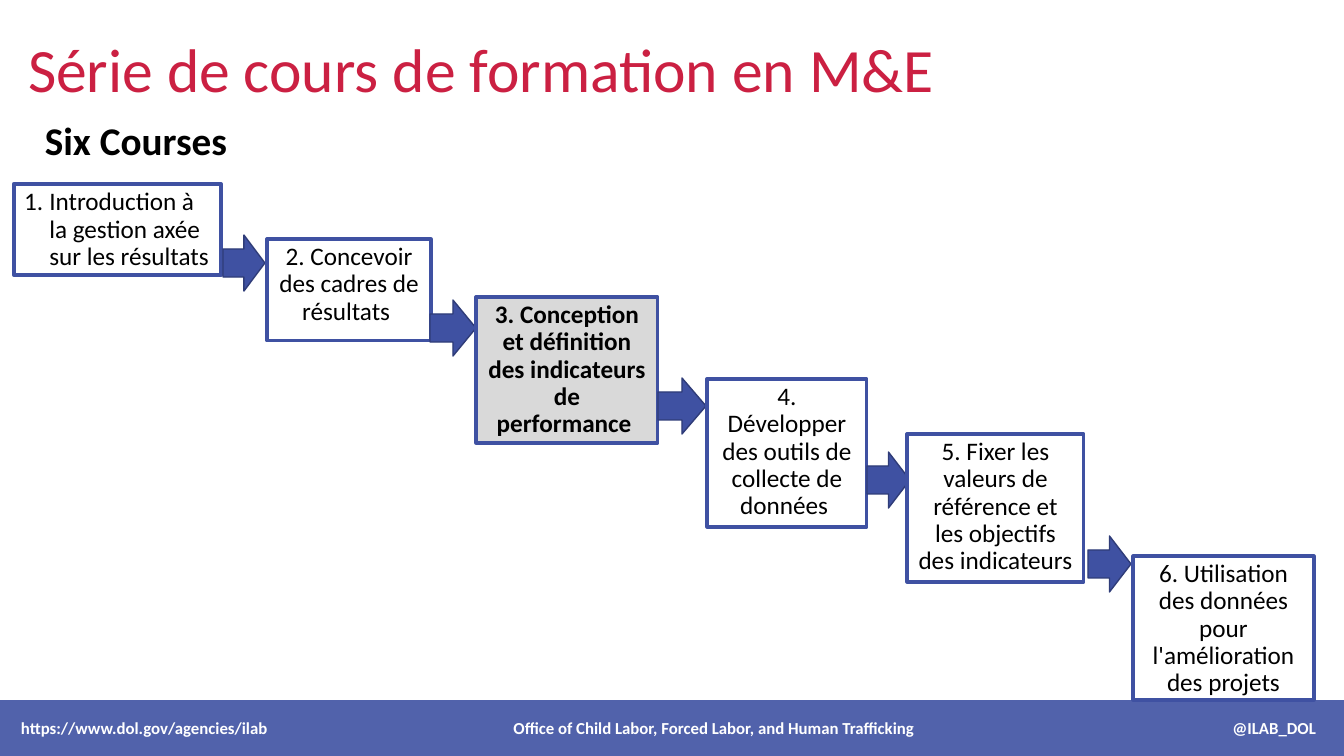
import pptx
import pptx.util
import pptx.dml.color
import pptx.enum.shapes
import pptx.enum.text
import pptx.oxml
import pptx.oxml.ns

RGB = pptx.dml.color.RGBColor
SHAPE = pptx.enum.shapes.MSO_SHAPE
ALIGN = pptx.enum.text.PP_ALIGN
ANCHOR = pptx.enum.text.MSO_ANCHOR
AUTO = pptx.enum.text.MSO_AUTO_SIZE
Pt = pptx.util.Pt

CRIMSON = RGB(0xCB, 0x20, 0x42)
BLUE = RGB(0x3F, 0x51, 0xA2)
NAVY = RGB(0x2F, 0x3C, 0x78)
GREY = RGB(0xD9, 0xD9, 0xD9)
WHITE = RGB(0xFF, 0xFF, 0xFF)
BLACK = RGB(0, 0, 0)

EMU_PER_PX = 914400 / 100.8
ARROW_HEIGHT = 56

COURSES = [
    ((267, 239, 164, 102), "2. Concevoir des cadres de résultats "),
    ((476, 297, 182, 146), "3. Conception et définition des indicateurs de performance "),
    ((707, 379, 160, 148), "4. Développer des outils de collecte de données "),
    ((907, 434, 177, 148), "5. Fixer les valeurs de référence et les objectifs des indicateurs "),
    ((1133, 556, 181, 144), "6. Utilisation des données pour l'amélioration des projets"),
]
CURRENT_COURSE = 3
ARROWS = [(223, 235, 42), (430, 300, 46), (658, 378, 48), (867, 452, 43), (1088, 536, 43)]
FOOTER = [
    (11, 400, ALIGN.LEFT, "https://www.dol.gov/agencies/ilab"),
    (464, 500, ALIGN.CENTER, "Office of Child Labor, Forced Labor, and Human Trafficking"),
    (1026, 300, ALIGN.RIGHT, "@ILAB_DOL"),
]


def px(n):
    return round(n * EMU_PER_PX)


class Deck:
    font = "Calibri"

    def __init__(self, width, height):
        self.prs = pptx.Presentation()
        self.prs.slide_width, self.prs.slide_height = px(width), px(height)
        self.slide = self.prs.slides.add_slide(self.prs.slide_layouts[1])

    def place(self, sp, box):
        sp.left, sp.top, sp.width, sp.height = map(px, box)

    def set_text(self, sp, text, size, color, bold=False, align=ALIGN.LEFT,
                 anchor=ANCHOR.TOP, spacing=0.9, wrap=True):
        tf = sp.text_frame
        tf.text = text
        tf.word_wrap = wrap
        tf.auto_size = AUTO.NONE
        tf.vertical_anchor = anchor
        p = tf.paragraphs[0]
        p.alignment = align
        p.line_spacing = spacing
        p.space_before = Pt(0)
        f = p.runs[0].font
        f.name, f.size, f.bold = self.font, Pt(size), bold
        f.color.rgb = color

    def paint(self, sp, fill, line=None, weight=1):
        sp.fill.solid()
        sp.fill.fore_color.rgb = fill
        if line is None:
            sp.line.fill.background()
        else:
            sp.line.color.rgb = line
            sp.line.width = Pt(weight)

    def shape(self, kind, box, fill, line=None, weight=1):
        sp = self.slide.shapes.add_shape(kind, *map(px, box))
        sp.shadow.inherit = False
        self.paint(sp, fill, line, weight)
        return sp

    def title(self, box, text):
        sp = self.slide.shapes.title
        self.place(sp, box)
        self.set_text(sp, text, 44, CRIMSON, anchor=ANCHOR.MIDDLE)

    def label(self, box, text, size, color, **style):
        sp = self.slide.shapes.add_textbox(*map(px, box))
        self.set_text(sp, text, size, color, bold=True, spacing=1.0, **style)

    def numbered_body(self, box, text):
        sp = self.slide.placeholders[1]
        self.place(sp, box)
        self.paint(sp, WHITE, BLUE, 3)
        self.set_text(sp, text, 18, BLACK)
        pPr = sp.text_frame.paragraphs[0]._p.get_or_add_pPr()
        pPr.set("marL", "228600")
        pPr.set("indent", "-228600")
        bullet = pptx.oxml.parse_xml(
            '<a:buAutoNum %s type="arabicPeriod"/>' % pptx.oxml.ns.nsdecls("a"))
        pPr.append(bullet)

    def course(self, box, text, current):
        sp = self.shape(SHAPE.RECTANGLE, box, GREY if current else WHITE, BLUE, 2.25)
        self.set_text(sp, text, 18, BLACK, bold=current, align=ALIGN.CENTER)

    def arrow(self, left, top, width):
        self.shape(SHAPE.RIGHT_ARROW, (left, top, width, ARROW_HEIGHT), BLUE, NAVY)

    def footer(self, top, height, width, parts):
        sp = self.shape(SHAPE.RECTANGLE, (0, top, width, height), BLUE)
        color = sp._element.spPr.find(".//" + pptx.oxml.ns.qn("a:srgbClr"))
        color.append(pptx.oxml.parse_xml(
            '<a:alpha %s val="90000"/>' % pptx.oxml.ns.nsdecls("a")))
        for left, w, align, text in parts:
            self.label((left, top, w, height), text, 12, WHITE,
                       align=align, anchor=ANCHOR.MIDDLE)


def main():
    deck = Deck(1344, 756)
    deck.title((18, 0, 1159, 146), "Série de cours de formation en M&E")
    deck.label((35, 111, 205, 57), "Six Courses", 28, BLACK, wrap=False)
    deck.numbered_body((14, 184, 207, 91), "Introduction à la gestion axée sur les résultats")
    for number, (arrow, (box, text)) in enumerate(zip(ARROWS, COURSES), start=2):
        deck.arrow(*arrow)
        deck.course(box, text, number == CURRENT_COURSE)
    deck.footer(700, 56, 1348, FOOTER)
    deck.prs.save("out.pptx")


if __name__ == "__main__":
    main()
